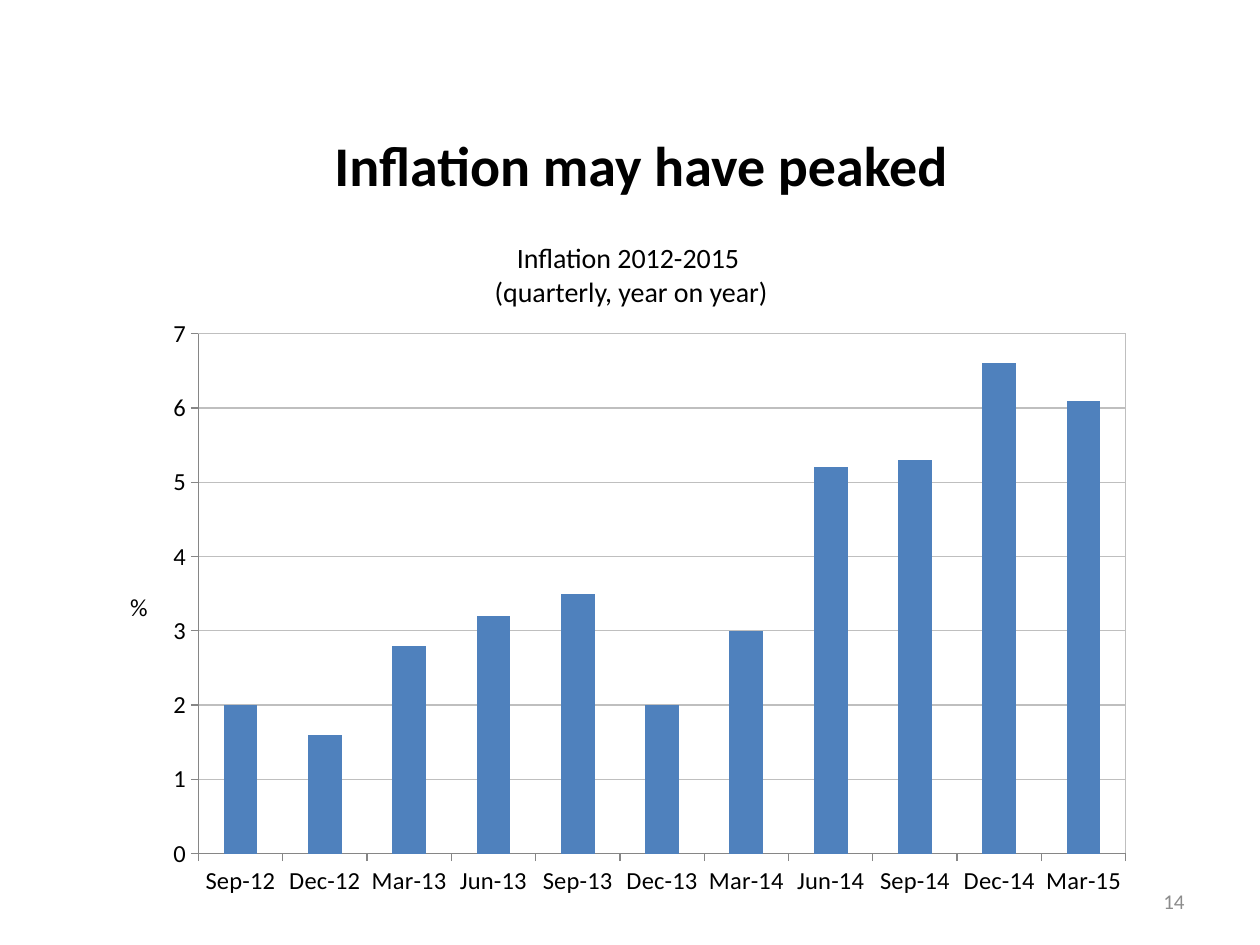
"""Build a slide with a column chart of quarterly inflation."""
from dataclasses import dataclass

from pptx import Presentation
from pptx.chart.chart import Chart
from pptx.chart.data import CategoryChartData
from pptx.dml.color import RGBColor
from pptx.enum.chart import XL_CHART_TYPE, XL_TICK_MARK
from pptx.enum.text import MSO_ANCHOR, PP_ALIGN
from pptx.oxml import parse_xml
from pptx.oxml.ns import nsdecls, qn
from pptx.slide import Slide
from pptx.util import Pt

FONT = "Calibri"
BLACK, GREY, GRID, AXIS, BLUE = "000000", "8C8C8C", "BFBFBF", "868686", "4F81BD"
INFLATION = {
    "Sep-12": 2, "Dec-12": 1.6, "Mar-13": 2.8, "Jun-13": 3.2,
    "Sep-13": 3.5, "Dec-13": 2, "Mar-14": 3, "Jun-14": 5.2,
    "Sep-14": 5.3, "Dec-14": 6.6, "Mar-15": 6.1,
}
PLOT_LAYOUT = {"x": 0.09, "y": 0.05, "w": 0.89, "h": 0.86}


@dataclass
class TextItem:
    """One text block with its frame in points and its format."""

    lines: tuple[str, ...]
    frame: tuple[float, float, float, float]
    size: float
    color: str = BLACK
    bold: bool = False
    align: PP_ALIGN = PP_ALIGN.CENTER
    is_title: bool = False


CHART_HEADING = TextItem(("Inflation 2012-2015 ", "(quarterly, year on year)"),
                         (36.7, 111.6, 648, 90), 16, is_title=True)
HEADLINE = TextItem(("Inflation may have peaked",), (42.5, 49, 648, 90), 32, bold=True)
PAGE_NUMBER = TextItem(("14",), (516, 500.5, 168, 28.75), 12, GREY, align=PP_ALIGN.RIGHT)


def rgb(value: str) -> RGBColor:
    """Turn a hex string into a colour."""
    return RGBColor.from_string(value)


def set_attributes(target: object, values: dict) -> None:
    """Set every named attribute on the target."""
    for name, value in values.items():
        setattr(target, name, value)


def format_font(font: object, size: float, color: str = BLACK, bold: bool = False) -> None:
    """Apply typeface, size, weight and colour to a font."""
    set_attributes(font, {"name": FONT, "size": Pt(size), "bold": bold})
    font.color.rgb = rgb(color)


def draw_text(slide: Slide, item: TextItem) -> None:
    """Write a text item into the title placeholder or a new text box."""
    left, top, width, height = (Pt(length) for length in item.frame)
    if item.is_title:
        box = slide.shapes.title
        set_attributes(box, {"left": left, "top": top, "width": width, "height": height})
    else:
        box = slide.shapes.add_textbox(left, top, width, height)
    set_attributes(box.text_frame, {"word_wrap": True, "vertical_anchor": MSO_ANCHOR.MIDDLE})
    para = box.text_frame.paragraphs[0]
    para.alignment = item.align
    for index, line in enumerate(item.lines):
        if index:
            para.add_line_break()
        span = para.add_run()
        span.text = line
        format_font(span.font, item.size, item.color, item.bold)


def place_plot(chart: Chart) -> None:
    """Fix the inner plot area and give it a thin border."""
    plot_area = chart.element.find(".//" + qn("c:plotArea"))
    for layout in plot_area.findall(qn("c:layout")):
        plot_area.remove(layout)
    places = "".join(f'<c:{side} val="{share}"/>' for side, share in PLOT_LAYOUT.items())
    plot_area.insert(0, parse_xml(
        f'<c:layout {nsdecls("c")}><c:manualLayout><c:layoutTarget val="inner"/>'
        f'<c:xMode val="edge"/><c:yMode val="edge"/>{places}</c:manualLayout></c:layout>'))
    plot_area.append(parse_xml(
        f'<c:spPr {nsdecls("c", "a")}><a:noFill/><a:ln w="{Pt(0.75)}"><a:solidFill>'
        f'<a:srgbClr val="{GRID}"/></a:solidFill></a:ln></c:spPr>'))


def draw_chart(slide: Slide) -> None:
    """Add the inflation column chart."""
    data = CategoryChartData()
    data.categories = list(INFLATION)
    data.add_series("Series 1", list(INFLATION.values()))
    chart = slide.shapes.add_chart(XL_CHART_TYPE.COLUMN_CLUSTERED, Pt(59.75), Pt(173.5),
                                   Pt(595.5), Pt(345.5), data).chart
    set_attributes(chart, {"has_legend": False, "has_title": False})
    format_font(chart.font, 10)

    plot = chart.plots[0]
    set_attributes(plot, {"gap_width": 150, "vary_by_categories": False})
    fill = plot.series[0].format.fill
    fill.solid()
    fill.fore_color.rgb = rgb(BLUE)

    for axis in (chart.category_axis, chart.value_axis):
        set_attributes(axis, {"major_tick_mark": XL_TICK_MARK.OUTSIDE,
                              "minor_tick_mark": XL_TICK_MARK.NONE})
        format_font(axis.tick_labels.font, 14)
        axis.format.line.color.rgb = rgb(AXIS)
        axis.format.line.width = Pt(0.75)

    value_axis = chart.value_axis
    set_attributes(value_axis, {"minimum_scale": 0, "maximum_scale": 7, "major_unit": 1,
                                "has_major_gridlines": True})
    grid_line = value_axis.major_gridlines.format.line
    grid_line.color.rgb = rgb(GRID)
    grid_line.width = Pt(0.75)

    title_frame = value_axis.axis_title.text_frame
    span = title_frame.paragraphs[0].add_run()
    span.text = "%"
    format_font(span.font, 14)
    body = value_axis.axis_title.element.find(".//" + qn("a:bodyPr"))
    body.set("rot", "0")
    body.set("vert", "horz")
    place_plot(chart)


def main() -> None:
    """Build and save the deck."""
    deck = Presentation()
    set_attributes(deck, {"slide_width": Pt(720), "slide_height": Pt(540)})
    page = deck.slides.add_slide(deck.slide_layouts[5])
    draw_text(page, CHART_HEADING)
    draw_chart(page)
    draw_text(page, HEADLINE)
    draw_text(page, PAGE_NUMBER)
    deck.save("out.pptx")


if __name__ == "__main__":
    main()
